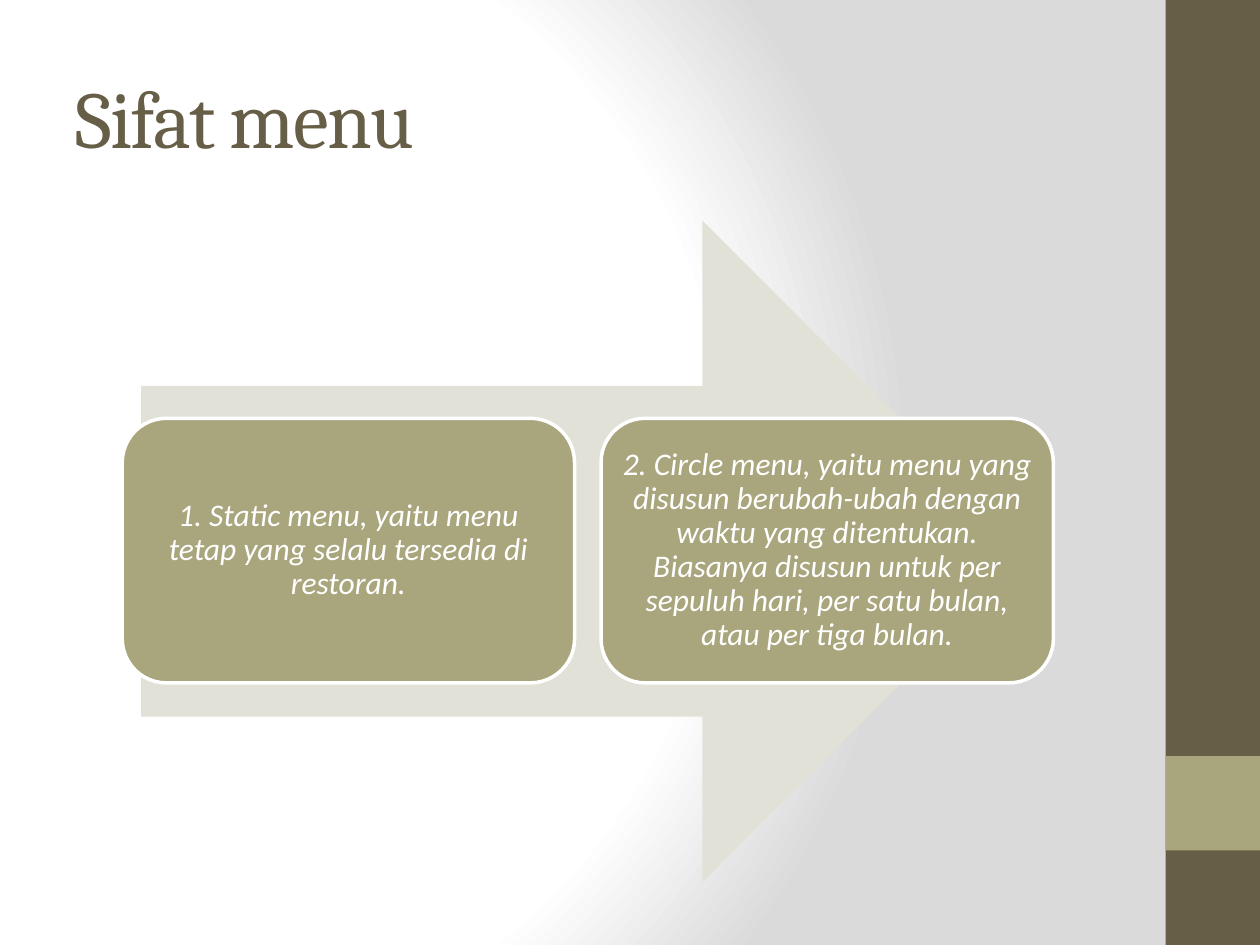
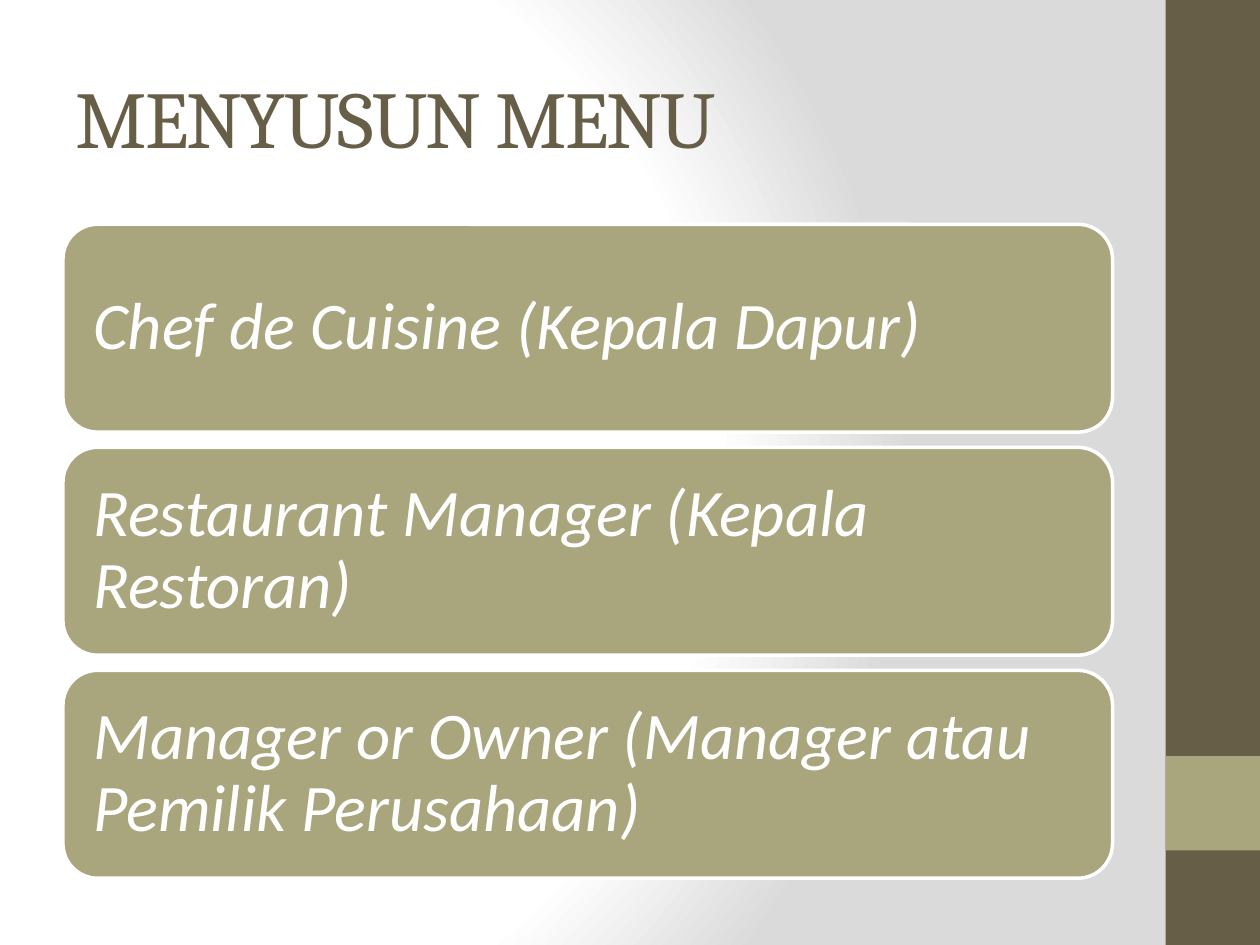
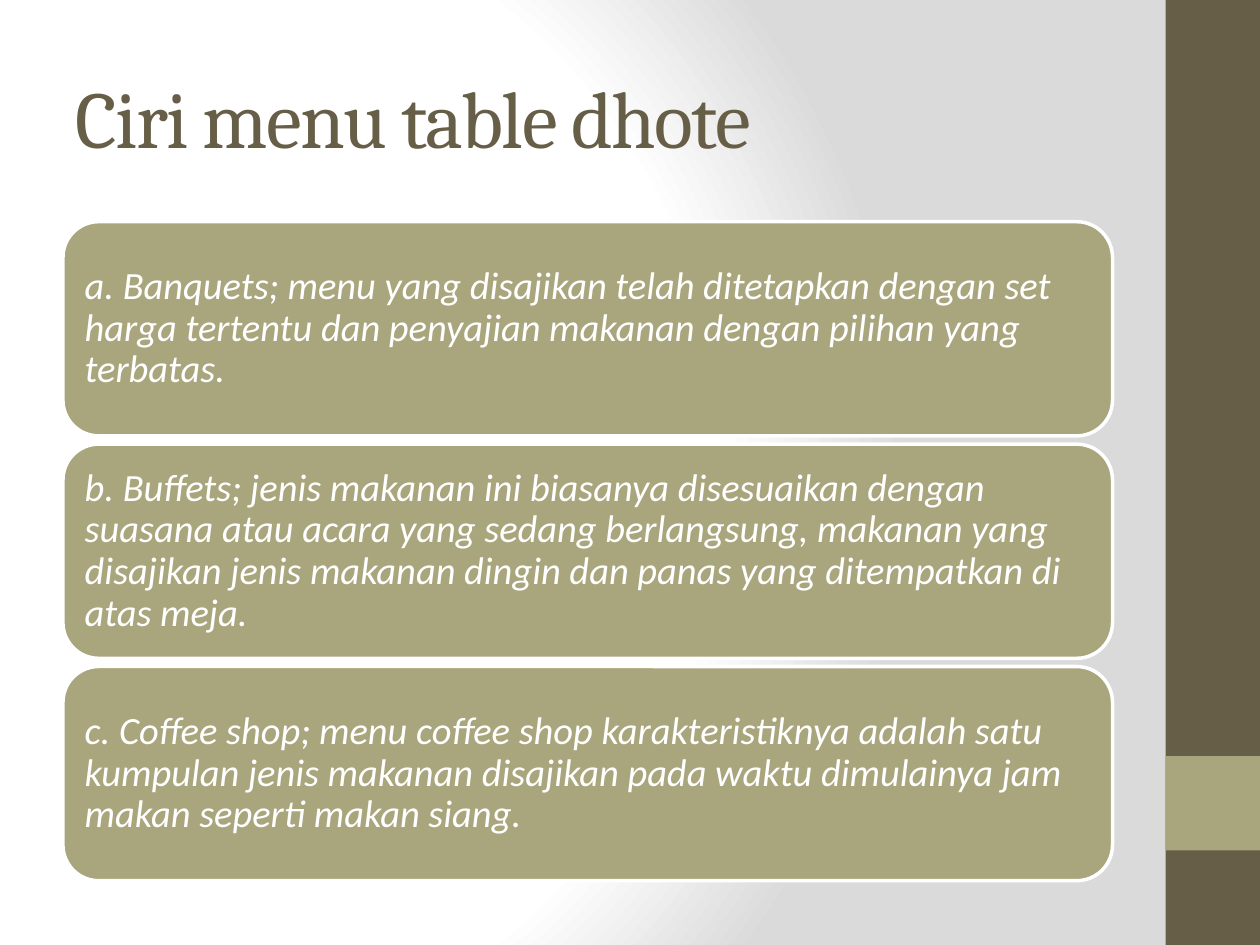
from pptx import Presentation
from pptx import util as u
from pptx.dml.color import RGBColor
from pptx.enum import shapes, text
from pptx.oxml import parse_xml
from pptx.oxml.ns import nsdecls

COLORS = {
    "brown": "675E47",
    "olive": "A9A57C",
    "pale": "E2E1D7",
    "white": "FFFFFF",
    "grey": "DADADA",
}
TITLE_FONT = {"name": "Cambria", "size": u.Pt(46)}
CARD_FONT = {"name": "Calibri", "italic": True}
BANDS = [(0, 7.5, "brown"), (6, 0.75, "olive")]

# Each slide: first card's left, top, width, height; step across, step down; inset; text size
SLIDES = [
    {
        "title": "Sifat menu",
        "arrow": (1.12, 1.75, 7.08, 5.25),
        "card": (0.97, 3.32, 3.59, 2.1),
        "step": (3.8, 0),
        "inset": 0.07,
        "size": 18,
        "align": text.PP_ALIGN.CENTER,
        "texts": [
            "1. Static menu, yaitu menu tetap yang selalu tersedia di restoran.",
            "2. Circle menu, yaitu menu yang disusun berubah-ubah dengan waktu yang "
            "ditentukan. Biasanya disusun untuk per sepuluh hari, per satu bulan, "
            "atau per tiga bulan.",
        ],
    },
    {
        "title": "MENYUSUN MENU",
        "card": (0.5, 1.78, 8.33, 1.65),
        "step": (0, 1.77),
        "inset": 0.16,
        "size": 38,
        "align": text.PP_ALIGN.LEFT,
        "texts": [
            "Chef de Cuisine (Kepala Dapur)",
            "Restaurant Manager (Kepala Restoran)",
            "Manager or Owner (Manager atau Pemilik Perusahaan)",
        ],
    },
    {
        "title": "Ciri menu table dhote",
        "card": (0.5, 1.76, 8.33, 1.7),
        "step": (0, 1.765),
        "inset": 0.09,
        "size": 22,
        "align": text.PP_ALIGN.LEFT,
        "texts": [
            "a. Banquets; menu yang disajikan telah ditetapkan dengan set harga "
            "tertentu dan penyajian makanan dengan pilihan yang terbatas.",
            "b. Buffets; jenis makanan ini biasanya disesuaikan dengan suasana atau "
            "acara yang sedang berlangsung, makanan yang disajikan jenis makanan "
            "dingin dan panas yang ditempatkan di atas meja.",
            "c. Coffee shop; menu coffee shop karakteristiknya adalah satu kumpulan "
            "jenis makanan disajikan pada waktu dimulainya jam makan seperti makan "
            "siang.",
        ],
    },
]


def add_filled(page, kind, place, color):
    """Add a shadowless preset shape without an outline; place is in inches."""
    shape = page.shapes.add_shape(kind, *map(u.Inches, place))
    shape.shadow.inherit = False
    shape.fill.solid()
    shape.fill.fore_color.rgb = RGBColor.from_string(COLORS[color])
    shape.line.fill.background()
    return shape


def write(frame, words, align, color, font):
    frame.word_wrap = True
    frame.vertical_anchor = text.MSO_ANCHOR.MIDDLE
    para = frame.paragraphs[0]
    para.alignment = align
    span = para.add_run()
    span.text = words
    span.font.color.rgb = RGBColor.from_string(COLORS[color])
    for key, value in font.items():
        setattr(span.font, key, value)
    return para


deck = Presentation()
deck.slide_width, deck.slide_height = u.Inches(10), u.Inches(7.5)
layout = deck.slide_layouts.get_by_name("Title Only")

# Shared background, title place and side bands live on the layout
layout.background.fill.solid()
solid = layout.element.cSld.bg.bgPr[0]
stops = "".join(
    f'<a:gs pos="{position}"><a:srgbClr val="{COLORS[color]}"/></a:gs>'
    for position, color in [(0, "white"), (75000, "white"), (100000, "grey")]
)
gradient = parse_xml(
    f'<a:gradFill {nsdecls("a")} rotWithShape="1"><a:gsLst>{stops}</a:gsLst>'
    '<a:path path="circle"><a:fillToRect l="20000" t="50000" r="100000" b="50000"/>'
    "</a:path></a:gradFill>"
)
solid.getparent().replace(solid, gradient)

title_place = {"left": 0.5, "top": 0.3, "width": 8.33, "height": 1.25}
for key, value in title_place.items():
    setattr(layout.placeholders[0], key, u.Inches(value))

pages = [deck.slides.add_slide(layout) for content in SLIDES]
for number, (top, height, color) in enumerate(BANDS):
    band = add_filled(pages[0], shapes.MSO_SHAPE.RECTANGLE, (9.25, top, 0.75, height), color)
    band.element.nvSpPr.cNvPr.set("id", str(100 + number))
    layout.shapes.element.append(band.element)

for page, content in zip(pages, SLIDES):
    para = write(page.shapes.title.text_frame, content["title"],
                 text.PP_ALIGN.LEFT, "brown", TITLE_FONT)
    para.runs[0].font._element.set("spc", "-100")

    if "arrow" in content:
        add_filled(page, shapes.MSO_SHAPE.RIGHT_ARROW, content["arrow"], "pale")

    left, top, width, height = content["card"]
    across, down = content["step"]
    for index, words in enumerate(content["texts"]):
        place = (left + index * across, top + index * down, width, height)
        card = add_filled(page, shapes.MSO_SHAPE.ROUNDED_RECTANGLE, place, "olive")
        card.line.color.rgb = RGBColor.from_string(COLORS["white"])
        card.line.width = u.Pt(2)
        for side in ("left", "top", "right", "bottom"):
            setattr(card.text_frame, f"margin_{side}", u.Inches(content["inset"]))
        para = write(card.text_frame, words, content["align"], "white",
                     {**CARD_FONT, "size": u.Pt(content["size"])})
        para.line_spacing = 0.9

deck.save("out.pptx")
